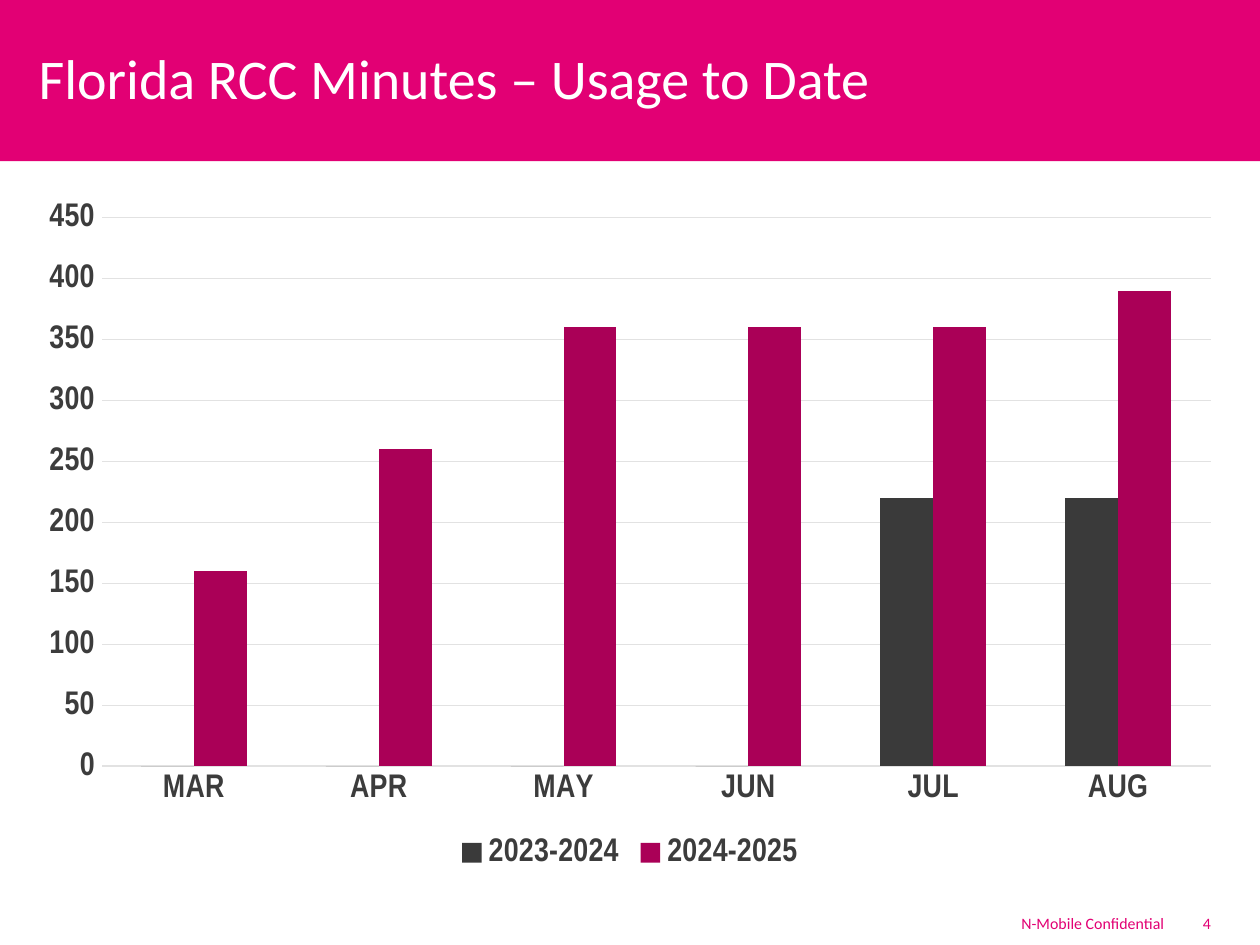
from pptx import Presentation
from pptx.chart.data import CategoryChartData
from pptx.dml.color import RGBColor
from pptx.enum.chart import XL_CHART_TYPE, XL_LEGEND_POSITION, XL_TICK_MARK
from pptx.enum.shapes import MSO_SHAPE
from pptx.enum.text import MSO_ANCHOR, MSO_AUTO_SIZE, PP_ALIGN
from pptx.util import Inches, Pt

CLUSTERED = XL_CHART_TYPE.COLUMN_CLUSTERED
LEGEND_BOTTOM = XL_LEGEND_POSITION.BOTTOM
NO_TICKS = XL_TICK_MARK.NONE
RECTANGLE = MSO_SHAPE.RECTANGLE
MIDDLE = MSO_ANCHOR.MIDDLE
NO_AUTOFIT = MSO_AUTO_SIZE.NONE
LEFT, RIGHT = PP_ALIGN.LEFT, PP_ALIGN.RIGHT

MAGENTA = "E20074"
WHITE = "FFFFFF"
CHARCOAL = "3C3C3C"
GRID_GRAY = "E2E2E2"
TITLE_LAYOUT = 5

MONTHS = ["MAR", "APR", "MAY", "JUN", "JUL", "AUG"]
MINUTES = [
    ("2023-2024", "3A3A3A", [0, 0, 0, 0, 220, 220]),
    ("2024-2025", "AA0057", [160, 260, 360, 360, 360, 390]),
]


def color(value):
    """Turn a hex string into a colour."""
    return RGBColor.from_string(value)


def style_font(font, size, value, name="Calibri", bold=False):
    """Set the face, size, weight and colour of a font."""
    font.name = name
    font.size = Pt(size)
    font.bold = bold
    font.color.rgb = color(value)


def fill_text(shape, text, size, value, alignment, margins):
    """Write one line of vertically centred text into a shape."""
    frame = shape.text_frame
    frame.word_wrap = True
    frame.auto_size = NO_AUTOFIT
    frame.vertical_anchor = MIDDLE
    side, edge = margins
    frame.margin_left = frame.margin_right = Inches(side)
    frame.margin_top = frame.margin_bottom = Inches(edge)
    paragraph = frame.paragraphs[0]
    paragraph.alignment = alignment
    run = paragraph.add_run()
    run.text = text
    style_font(run.font, size, value)


def add_title(slide, text):
    """Place the title placeholder over a full-width magenta band."""
    title = slide.shapes.title
    title.left, title.top = Inches(0.15), Inches(0.16)
    title.width, title.height = Inches(7.24), Inches(0.6)
    fill_text(title, text, 24, WHITE, LEFT, (0.08, 0.04))
    band = slide.shapes.add_shape(RECTANGLE, 0, 0, Inches(7.5), Inches(0.96))
    band.shadow.inherit = False
    band.fill.solid()
    band.fill.fore_color.rgb = color(MAGENTA)
    band.line.fill.background()
    title.element.addprevious(band.element)


def add_footer(slide, text, left, width, alignment):
    """Add a small magenta text at the foot of the slide."""
    box = slide.shapes.add_textbox(Inches(left), Inches(5.41), Inches(width), Inches(0.17))
    fill_text(box, text, 6.8, MAGENTA, alignment, (0.06, 0.03))


def style_axis(axis):
    """Give an axis bold labels without line or ticks."""
    axis.major_tick_mark = axis.minor_tick_mark = NO_TICKS
    axis.format.line.fill.background()
    style_font(axis.tick_labels.font, 14, CHARCOAL, "Arial Narrow", True)


def add_usage_chart(slide):
    """Add the clustered columns that compare minutes by month."""
    data = CategoryChartData(number_format="#,##0")
    data.categories = MONTHS
    for name, _, values in MINUTES:
        data.add_series(name, values)
    frame = slide.shapes.add_chart(
        CLUSTERED, Inches(0.15), Inches(1.12), Inches(7.2), Inches(4.09), data)
    chart = frame.chart
    chart.has_title = False
    style_font(chart.font, 10, CHARCOAL)

    plot = chart.plots[0]
    plot.gap_width = 150
    plot.overlap = 0
    plot.vary_by_categories = False
    for series, (_, value, _) in zip(plot.series, MINUTES):
        series.format.fill.solid()
        series.format.fill.fore_color.rgb = color(value)

    style_axis(chart.category_axis)
    value_axis = chart.value_axis
    style_axis(value_axis)
    value_axis.minimum_scale = 0
    value_axis.maximum_scale = 450
    value_axis.major_unit = 50
    value_axis.tick_labels.number_format = "#,##0"
    value_axis.tick_labels.number_format_is_linked = False
    value_axis.has_major_gridlines = True
    grid_line = value_axis.major_gridlines.format.line
    grid_line.color.rgb = color(GRID_GRAY)
    grid_line.width = Pt(0.75)

    chart.has_legend = True
    chart.legend.position = LEGEND_BOTTOM
    chart.legend.include_in_layout = False
    style_font(chart.legend.font, 14, CHARCOAL, "Arial Narrow", True)


def main():
    """Build the usage slide and save it."""
    presentation = Presentation()
    presentation.slide_width = Inches(7.5)
    presentation.slide_height = Inches(7.5 * 3 / 4)
    slide = presentation.slides.add_slide(presentation.slide_layouts[TITLE_LAYOUT])
    add_title(slide, "Florida RCC Minutes – Usage to Date")
    add_usage_chart(slide)
    add_footer(slide, "N-Mobile Confidential", 4.61, 2.38, RIGHT)
    add_footer(slide, "4", 7.1, 0.38, LEFT)
    presentation.save("out.pptx")


if __name__ == "__main__":
    main()
